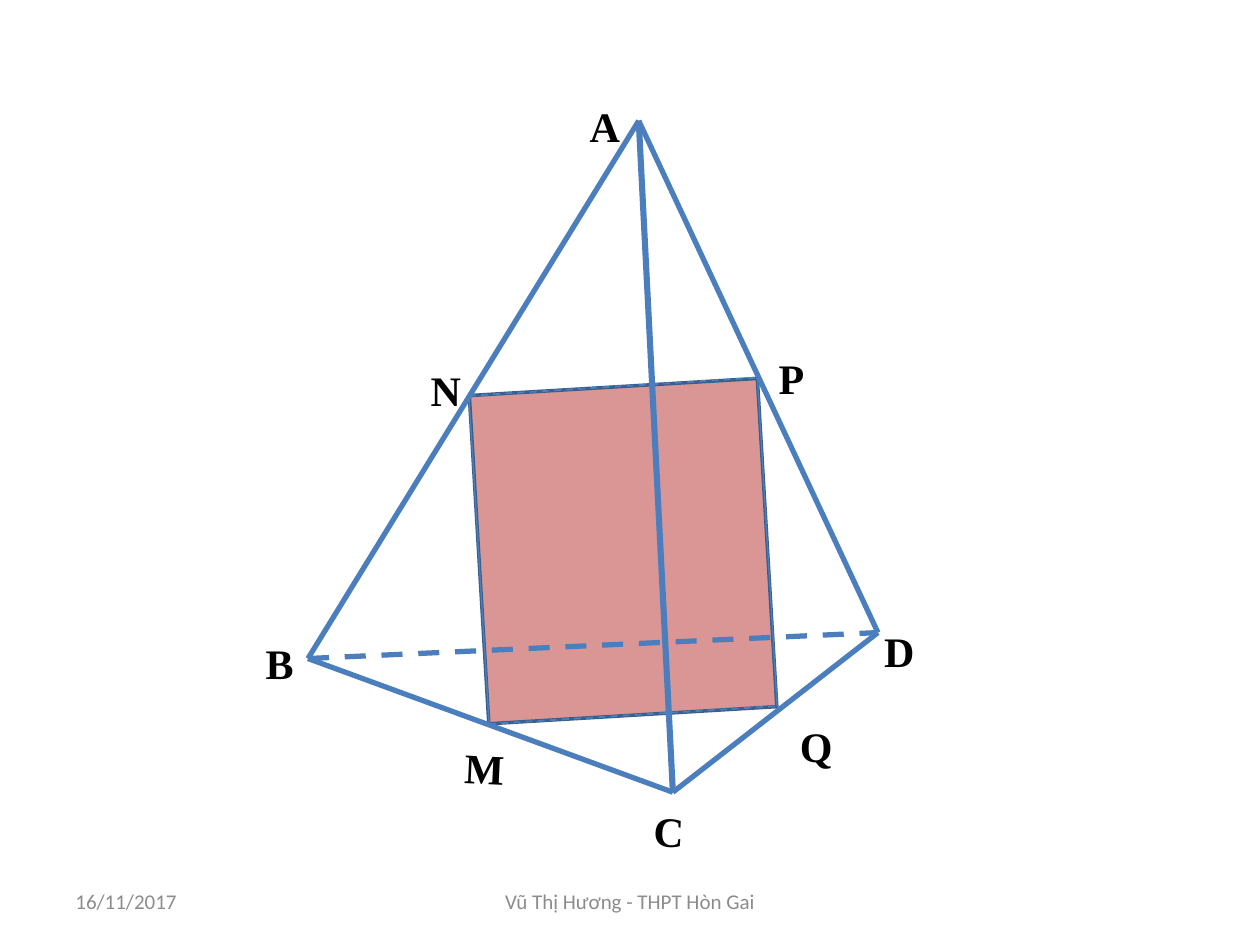
from lxml.etree import SubElement
from pptx import Presentation
from pptx.dml.color import RGBColor
from pptx.enum.dml import MSO_LINE
from pptx.enum.shapes import MSO_CONNECTOR, MSO_SHAPE
from pptx.enum.text import MSO_ANCHOR, PP_ALIGN
from pptx.oxml.ns import qn
from pptx.util import Pt

BLUE = RGBColor(0x4B, 0x7E, 0xBC)
DARK_BLUE = RGBColor(0x3A, 0x5F, 0x8C)
PINK = RGBColor(0xD9, 0x96, 0x94)
GRAY = RGBColor(0x8C, 0x8C, 0x8C)
BLACK = RGBColor(0, 0, 0)

# Points of the tetrahedron ABCD and its section MNPQ
POINTS = {
    "A": (365, 69), "B": (176, 376.3), "C": (384.5, 452.7), "D": (501.7, 361.5),
    "M": (279.5, 413.7), "N": (268, 226.2), "P": (432.8, 215.8), "Q": (444.1, 403.5),
}
# Section: left, top, width, height, rotation
SECTION = (273.6, 221, 164.9, 187.9, -3.4)
# Edge, line width, dashed
EDGES = [
    ("BC", 3, False), ("QP", 0.75, False), ("CD", 3, False), ("BD", 3, True),
    ("AB", 3, False), ("AD", 3, False), ("AC", 3.5, False),
    ("NP", 1, True), ("MN", 0.75, False), ("MQ", 1, True),
]
# Point name, left, top, rotation
LABELS = [
    ("A", 329.8, 54, 0), ("D", 498.2, 354.2, 0), ("B", 144.7, 360.7, 0),
    ("C", 366.5, 456.5, 3), ("M", 258.5, 420.5, 2.7), ("N", 239, 204.5, 0),
    ("P", 437.8, 198, 0), ("Q", 450, 408.2, 0),
]
LABEL_SIZE = (31, 36)
# Text, left, width, alignment
FOOTERS = [
    ("16/11/2017", 36, 168, PP_ALIGN.LEFT),
    ("Vũ Thị Hương - THPT Hòn Gai", 246, 228, PP_ALIGN.CENTER),
]
FOOTER_TOP, FOOTER_HEIGHT = 500.5, 28.8


def add_text(slide, text, bounds, font_name, size, color, bold=False,
             align=PP_ALIGN.LEFT, anchor=MSO_ANCHOR.TOP):
    box = slide.shapes.add_textbox(*map(Pt, bounds))
    frame = box.text_frame
    frame.word_wrap = True
    frame.vertical_anchor = anchor
    para = frame.paragraphs[0]
    para.text = text
    para.alignment = align
    para.font.name = font_name
    para.font.size = Pt(size)
    para.font.bold = bold
    para.font.color.rgb = color
    return box


def add_edge(slide, start, end, width, dashed):
    edge = slide.shapes.add_connector(
        MSO_CONNECTOR.STRAIGHT, *map(Pt, POINTS[start] + POINTS[end]))
    edge.line.color.rgb = BLUE
    edge.line.width = Pt(width)
    if dashed:
        edge.line.dash_style = MSO_LINE.DASH
    SubElement(edge.element.spPr, qn("a:effectLst"))


def add_section(slide):
    *bounds, rotation = SECTION
    section = slide.shapes.add_shape(MSO_SHAPE.RECTANGLE, *map(Pt, bounds))
    section.rotation = rotation
    section.shadow.inherit = False
    section.fill.solid()
    section.fill.fore_color.rgb = PINK
    section.line.color.rgb = DARK_BLUE
    section.line.width = Pt(2)


def main():
    deck = Presentation()
    deck.slide_width, deck.slide_height = Pt(720), Pt(540)
    slide = deck.slides.add_slide(deck.slide_layouts.get_by_name("Blank"))

    add_section(slide)
    for (start, end), width, dashed in EDGES:
        add_edge(slide, start, end, width, dashed)
    for name, left, top, rotation in LABELS:
        label = add_text(slide, name, (left, top, *LABEL_SIZE),
                         "Times New Roman", 24, BLACK, bold=True)
        label.rotation = rotation
    for text, left, width, align in FOOTERS:
        add_text(slide, text, (left, FOOTER_TOP, width, FOOTER_HEIGHT),
                 "Calibri", 12, GRAY, align=align, anchor=MSO_ANCHOR.MIDDLE)

    deck.save("out.pptx")


if __name__ == "__main__":
    main()
